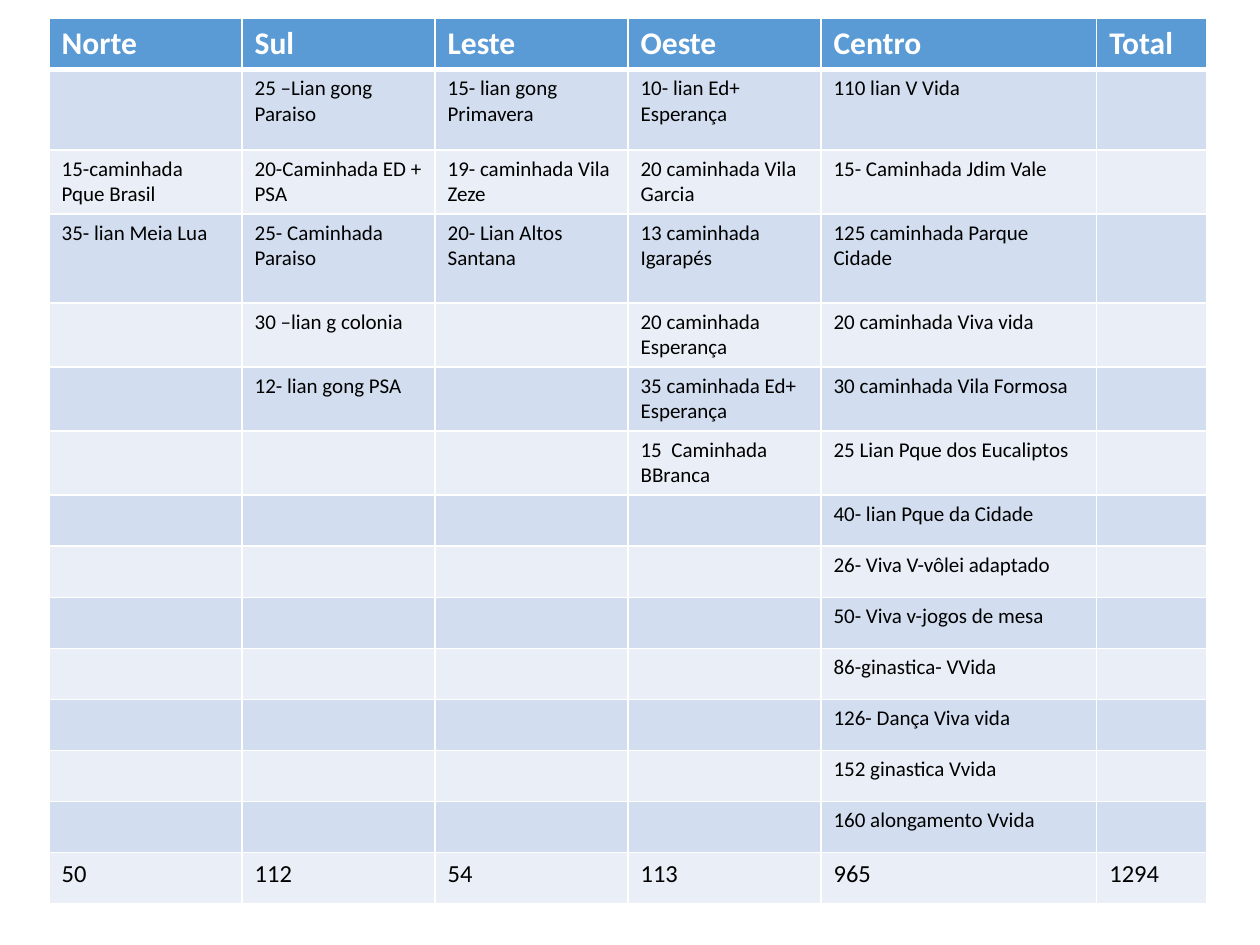
import lxml.etree
import pptx
import pptx.dml.color
import pptx.oxml.ns
import pptx.util
from pptx.util import Cm

REGIONS = ["Norte", "Sul", "Leste", "Oeste", "Centro", "Total"]
ACTIVITIES = [
    ["", "25 –Lian gong Paraiso", "15- lian gong Primavera", "10- lian Ed+ Esperança", "110 lian V Vida"],
    ["15-caminhada Pque Brasil", "20-Caminhada ED + PSA", "19- caminhada Vila Zeze",
     "20 caminhada Vila Garcia", "15- Caminhada Jdim Vale"],
    ["35- lian Meia Lua", "25- Caminhada Paraiso", "20- Lian Altos Santana",
     "13 caminhada Igarapés", "125 caminhada Parque Cidade"],
    ["", "30 –lian g colonia", "", "20 caminhada Esperança", "20 caminhada Viva vida"],
    ["", "12- lian gong PSA", "", "35 caminhada Ed+ Esperança", "30 caminhada Vila Formosa"],
    ["", "", "", "15  Caminhada BBranca", "25 Lian Pque dos Eucaliptos"],
]
CENTRO_ACTIVITIES = [
    "40- lian Pque da Cidade", "26- Viva V-vôlei adaptado", "50- Viva v-jogos de mesa",
    "86-ginastica- VVida", "126- Dança Viva vida", "152 ginastica Vvida", "160 alongamento Vvida",
]
TOTALS = ["50", "112", "54", "113", "965", "1294"]
COLUMN_WIDTHS = [3.89] * 4 + [5.56, 2.21]
ROW_HEIGHTS = [0.99, 1.62, 1.29, 1.8] + [1.29] * 3 + [1.03] * 8
BAND_COLORS = ["EAEFF7", "D2DEEF"]


def color(hex_string):
    return pptx.dml.color.RGBColor.from_string(hex_string)


def add_border(cell, side, width, line_color):
    qualified = pptx.oxml.ns.qn
    properties = cell._tc.get_or_add_tcPr()
    line = lxml.etree.SubElement(properties, qualified(f"a:{side}"), w=str(pptx.util.Pt(width)))
    fill = lxml.etree.SubElement(line, qualified("a:solidFill"))
    lxml.etree.SubElement(fill, qualified("a:srgbClr"), val=line_color)


def write_text(cell, text, size=12, text_color="000000", bold=False):
    run = cell.text_frame.paragraphs[0].add_run()
    run.text = text
    run.font.name = "Calibri"
    run.font.size = pptx.util.Pt(size)
    run.font.bold = bold
    run.font.color.rgb = color(text_color)


def format_cell(cell, fill_color, top_width=1, bottom_width=1):
    borders = {"lnL": 1, "lnR": 1, "lnT": top_width, "lnB": bottom_width}
    for side, width in borders.items():
        add_border(cell, side, width, "FFFFFF")
    cell.fill.solid()
    cell.fill.fore_color.rgb = color(fill_color)


def fill_row(table, row_index, texts, fill_color, top_width=1, bottom_width=1, **text_format):
    for column_index in range(len(REGIONS)):
        cell = table.cell(row_index, column_index)
        format_cell(cell, fill_color, top_width, bottom_width)
        if column_index < len(texts) and texts[column_index]:
            write_text(cell, texts[column_index], **text_format)


def add_activity_table(slide):
    frame = slide.shapes.add_table(
        len(ROW_HEIGHTS), len(COLUMN_WIDTHS), Cm(0.99), Cm(0.37),
        Cm(sum(COLUMN_WIDTHS)), Cm(sum(ROW_HEIGHTS)))
    table = frame.table
    for column, width in zip(table.columns, COLUMN_WIDTHS):
        column.width = Cm(width)
    for row, height in zip(table.rows, ROW_HEIGHTS):
        row.height = Cm(height)

    fill_row(table, 0, REGIONS, "5B9BD5", bottom_width=3, size=18, text_color="FFFFFF", bold=True)
    activities = ACTIVITIES + [[""] * 4 + [text] for text in CENTRO_ACTIVITIES]
    for index, texts in enumerate(activities, start=1):
        fill_row(table, index, texts, BAND_COLORS[index % 2], top_width=3 if index == 1 else 1)
    last = len(ROW_HEIGHTS) - 1
    fill_row(table, last, TOTALS, BAND_COLORS[last % 2], size=14)


def main():
    presentation = pptx.Presentation()
    presentation.slide_width = Cm(25.4)
    presentation.slide_height = Cm(19.05)
    slide = presentation.slides.add_slide(presentation.slide_layouts[6])
    add_activity_table(slide)
    presentation.save("out.pptx")


if __name__ == "__main__":
    main()
